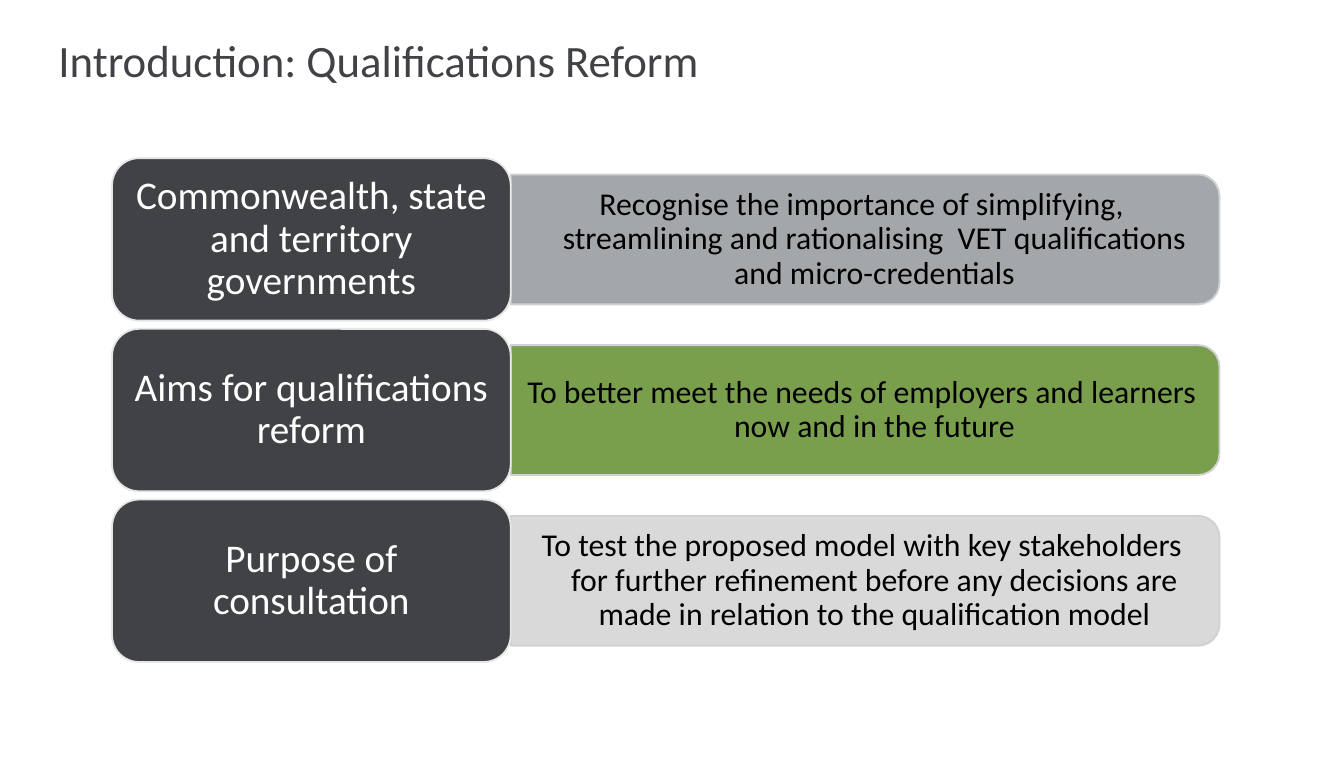
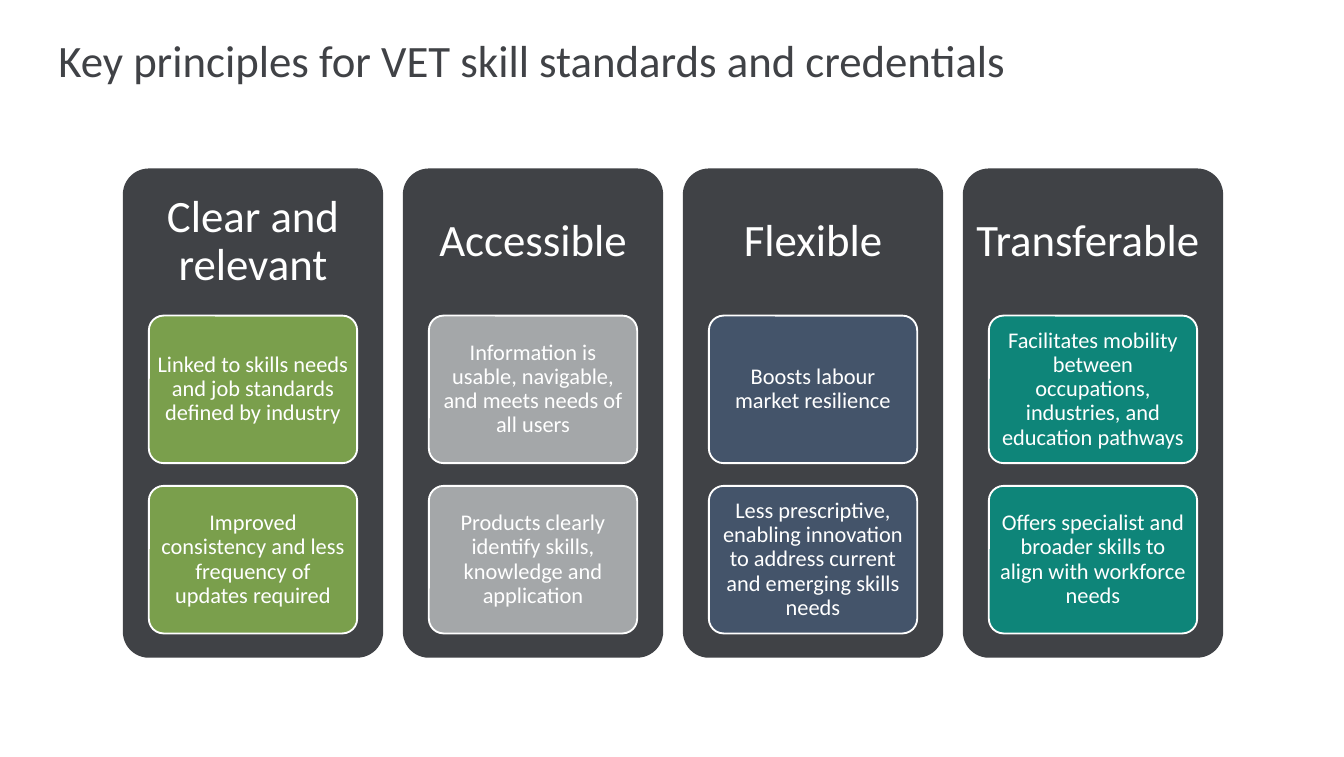
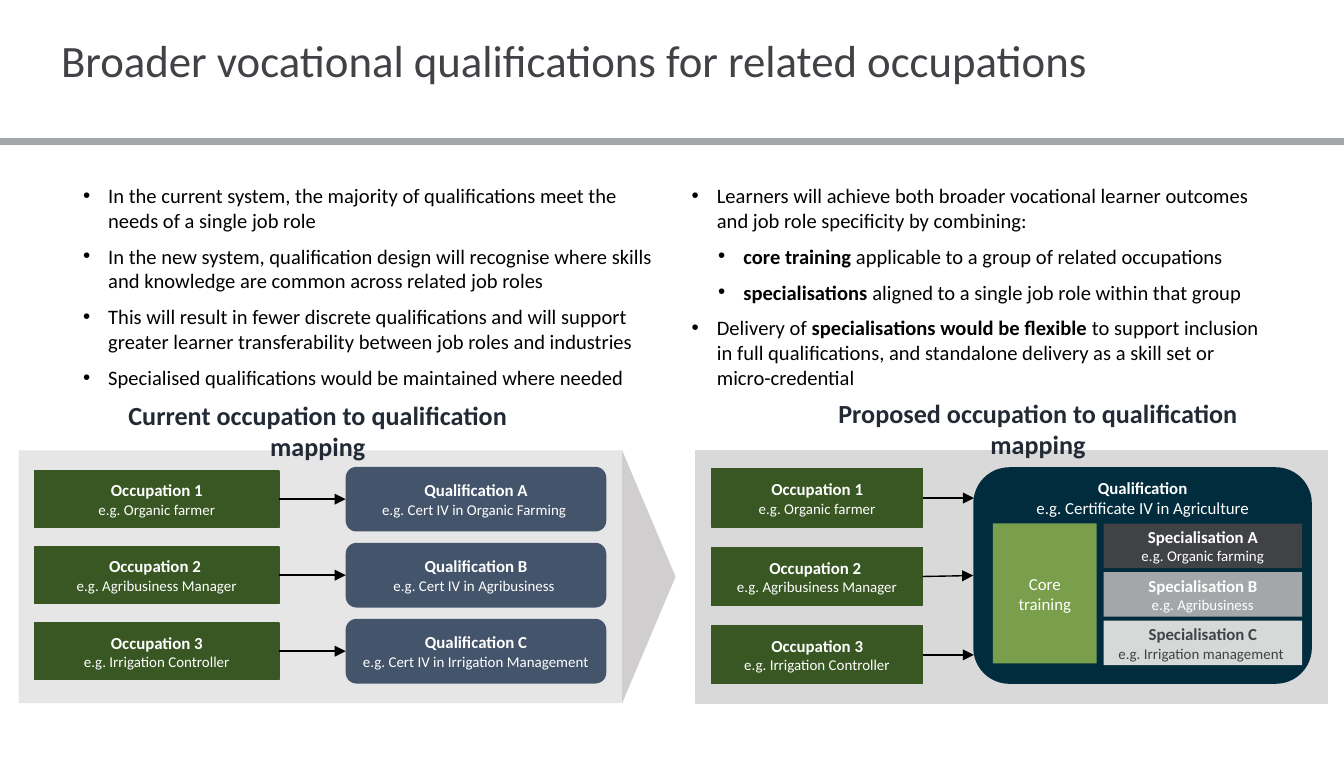
import lxml.etree
import pptx
import pptx.dml.color
import pptx.enum.shapes
import pptx.enum.text
import pptx.oxml.ns
import pptx.util

Pt = pptx.util.Pt
RGBColor = pptx.dml.color.RGBColor
SHAPE = pptx.enum.shapes.MSO_SHAPE
ALIGN = pptx.enum.text.PP_ALIGN
ANCHOR = pptx.enum.text.MSO_ANCHOR
qn = pptx.oxml.ns.qn

FONT = "Calibri"
LEVEL_STEP = 14.2
WHITE = RGBColor(0xFF, 0xFF, 0xFF)
BLACK = RGBColor(0x00, 0x00, 0x00)
CHARCOAL = RGBColor(0x40, 0x42, 0x46)
GREY = RGBColor(0xA4, 0xA7, 0xA9)
LIGHT_GREY = RGBColor(0xD9, 0xD9, 0xD9)
SILVER = RGBColor(0xD7, 0xD8, 0xD8)
PALE_GREY = RGBColor(0xE7, 0xE6, 0xE6)
ARROW_GREY = RGBColor(0xD0, 0xCE, 0xCE)
EDGE_GREY = RGBColor(0xCF, 0xD1, 0xD4)
GREEN = RGBColor(0x7A, 0x9F, 0x4C)
FOREST = RGBColor(0x38, 0x57, 0x23)
SLATE = RGBColor(0x44, 0x54, 0x6A)
TEAL = RGBColor(0x0E, 0x85, 0x79)
NAVY = RGBColor(0x01, 0x2C, 0x3D)
HEADING = RGBColor(0x22, 0x2A, 0x35)

REFORM_ROWS = [
    ("Commonwealth, state and territory governments",
     "Recognise the importance of simplifying, streamlining and rationalising  VET qualifications "
     "and micro-credentials", GREY),
    ("Aims for qualifications reform",
     "To better meet the needs of employers and learners now and in the future", GREEN),
    ("Purpose of consultation",
     "To test the proposed model with key stakeholders for further refinement before any decisions "
     "are made in relation to the qualification model", LIGHT_GREY),
]

PRINCIPLES = [
    ("Clear and relevant", GREEN,
     ["Linked to skills needs and job standards defined by industry",
      "Improved consistency and less frequency of updates required"]),
    ("Accessible", GREY,
     ["Information is usable, navigable, and meets needs of all users",
      "Products clearly identify skills, knowledge and application"]),
    ("Flexible", SLATE,
     ["Boosts labour market resilience",
      "Less prescriptive, enabling innovation to address current and emerging skills needs"]),
    ("Transferable ", TEAL,
     ["Facilitates mobility between occupations, industries, and education pathways",
      "Offers specialist and broader skills to align with workforce needs"]),
]

CURRENT_POINTS = [
    "In the current system, the majority of qualifications meet the needs of a single job role ",
    "In the new system, qualification design will recognise where skills and knowledge are common "
    "across related job roles ",
    "This will result in fewer discrete qualifications and will support greater learner "
    "transferability between job roles and industries ",
    "Specialised qualifications would be maintained where needed",
]
PROPOSED_POINTS = [
    "Learners will achieve both broader vocational learner outcomes and job role specificity by "
    "combining:",
    [("core training ", True, 11), ("applicable to a group of related occupations", False, 11)],
    [("specialisations ", True, 11), ("aligned to a single job role within that group", False, 11)],
    [("Delivery of ", False, 11), ("specialisations would be flexible ", True, 11),
     ("to support inclusion in full qualifications, and standalone delivery as a skill set or "
      "micro-credential", False, 11)],
]

OCCUPATIONS = [
    ("Occupation 1", "e.g. Organic farmer"),
    ("Occupation 2 ", "e.g. Agribusiness Manager"),
    ("Occupation 3", "e.g. Irrigation Controller"),
]
QUALIFICATIONS = [
    ("Qualification A", "e.g. Cert IV in Organic Farming "),
    ("Qualification B", "e.g. Cert IV in Agribusiness "),
    ("Qualification C", "e.g. Cert IV in Irrigation Management"),
]
SPECIALISATIONS = [
    ("Specialisation A", "e.g. Organic farming", CHARCOAL, WHITE),
    ("Specialisation B", "e.g. Agribusiness", GREY, WHITE),
    ("Specialisation C", "e.g. Irrigation management ", SILVER, CHARCOAL),
]


def write_text(shape, paragraphs, size=9, color=WHITE, bold=False, align=ALIGN.CENTER,
               anchor=ANCHOR.MIDDLE, insets=(7.2, 7.2, 7.2, 7.2), line_spacing=None,
               levels=None, hang=0, bullet=None, space=0):
    frame = shape.text_frame
    frame.word_wrap = True
    frame.vertical_anchor = anchor
    frame.margin_left, frame.margin_top, frame.margin_right, frame.margin_bottom = map(Pt, insets)
    for index, content in enumerate(paragraphs):
        paragraph = frame.add_paragraph() if index else frame.paragraphs[0]
        level = levels[index] if levels else 0
        paragraph.level = level
        properties = paragraph._p.get_or_add_pPr()
        if hang:
            properties.set("marL", str(int(Pt(hang + LEVEL_STEP * level))))
            properties.set("indent", str(-int(Pt(hang))))
        if bullet:
            lxml.etree.SubElement(properties, qn("a:buFont")).set("typeface", "Arial")
            lxml.etree.SubElement(properties, qn("a:buChar")).set("char", bullet)
        paragraph.alignment = align
        if line_spacing:
            paragraph.line_spacing = line_spacing
        if space:
            paragraph.space_after = Pt(space)
            if index:
                paragraph.space_before = Pt(space)
        runs = [(content, bold, size)] if isinstance(content, str) else content
        for text, run_bold, run_size in runs:
            run = paragraph.add_run()
            run.text = text
            run.font.name = FONT
            run.font.size = Pt(run_size)
            run.font.bold = run_bold
            run.font.color.rgb = color


def add_text(slide, box, paragraphs, **text_format):
    write_text(slide.shapes.add_textbox(*map(Pt, box)), paragraphs, **text_format)


def add_box(slide, kind, box, fill, line=None, line_width=1, corner=None):
    shape = slide.shapes.add_shape(kind, *map(Pt, box))
    shape.shadow.inherit = False
    shape.fill.solid()
    shape.fill.fore_color.rgb = fill
    if line is None:
        shape.line.fill.background()
    else:
        shape.line.color.rgb = line
        shape.line.width = Pt(line_width)
    if corner is not None:
        shape.adjustments[0] = corner
    return shape


def add_turned_box(slide, kind, box, fill, line=None):
    left, top, width, height = box
    shift = (width - height) / 2
    shape = add_box(slide, kind, (left + shift, top - shift, height, width), fill, line)
    shape.rotation = 90
    return shape


def add_arrow(slide, start, end, source, target=None):
    connector = slide.shapes.add_connector(
        pptx.enum.shapes.MSO_CONNECTOR.STRAIGHT, *map(Pt, start + end))
    connector.begin_connect(source, 3)
    if target is not None:
        connector.end_connect(target, 1)
    connector.line.color.rgb = BLACK
    connector.line.width = Pt(0.75)
    outline = connector.element.spPr.find(qn("a:ln"))
    lxml.etree.SubElement(outline, qn("a:tailEnd")).set("type", "triangle")
    lxml.etree.SubElement(connector.element.spPr, qn("a:effectLst"))


def labelled(title, example, example_size=8):
    return [[(title, True, 9)], [(example, False, example_size)]]


def add_titled_slide(presentation, title, left=26.3):
    slide = presentation.slides.add_slide(presentation.slide_layouts[6])
    add_text(slide, (left, 15.6, 575, 32.4), [title], size=24, color=CHARCOAL,
             align=ALIGN.LEFT, insets=(5, 5, 5, 5))
    return slide


def add_reform_row(slide, box, label, detail, fill):
    left, top, width, height = box
    label_width = 0.36 * width
    detail_left = left + label_width
    detail_width = width - label_width
    detail_top = top + 0.1 * height
    detail_height = 0.8 * height
    add_turned_box(slide, SHAPE.ROUND_2_SAME_RECTANGLE,
                   (detail_left, detail_top, detail_width, detail_height), fill, EDGE_GREY)
    add_text(slide, (detail_left, detail_top + 3.4, detail_width - 3.4, detail_height - 6.8),
             [detail], size=17, color=BLACK, insets=(5, 2.7, 5, 2.7), line_spacing=0.9, hang=13.5)
    label_box = add_box(slide, SHAPE.ROUNDED_RECTANGLE, (left, top, label_width, height),
                        CHARCOAL, PALE_GREY)
    write_text(label_box, [label], size=21, insets=(6.3, 3.2, 6.3, 3.2), line_spacing=0.9)


def add_principle_column(slide, box, name, fill, statements):
    left, top, width, height = box
    header_height = 0.3 * height
    add_box(slide, SHAPE.ROUNDED_RECTANGLE, box, CHARCOAL, corner=0.1)
    add_text(slide, (left, top, width, header_height), [name], size=24, line_spacing=0.9)
    for index, statement in enumerate(statements):
        card = add_box(slide, SHAPE.ROUNDED_RECTANGLE,
                       (left + 0.1 * width, top + header_height + 0.2 + 91.2 * index,
                        0.8 * width, 79),
                       fill, WHITE, corner=0.1)
        write_text(card, [statement], size=12, insets=(2.4, 2.4, 2.4, 2.4), line_spacing=0.9)


def add_bullets(slide, box, points, levels=None):
    add_text(slide, box, points, size=11, color=BLACK, align=ALIGN.LEFT, anchor=ANCHOR.TOP,
             insets=(7.2, 3.6, 7.2, 3.6), levels=levels, hang=13.5, bullet="•", space=3)


def add_mapping_heading(slide, box, heading):
    add_text(slide, box, [heading], size=14, color=HEADING, bold=True, insets=(19.4, 2, 5, 2))


def add_occupations(slide, box, pitch):
    left, top, width, height = box
    shapes = []
    for index, (title, example) in enumerate(OCCUPATIONS):
        shape = add_box(slide, SHAPE.RECTANGLE, (left, top + pitch * index, width, height),
                        FOREST, FOREST, 0.75)
        write_text(shape, labelled(title, example), insets=(2.9, 2.9, 2.9, 2.9))
        shapes.append(shape)
    return shapes


def add_current_mapping(slide, box):
    left, top, width, height = box
    pitch = 40.7
    add_box(slide, SHAPE.RECTANGLE, box, PALE_GREY)
    add_turned_box(slide, SHAPE.ISOSCELES_TRIANGLE, (left + width, top, 28.6, height), ARROW_GREY)
    occupations = add_occupations(slide, (left + 8.5, top + 11, 131, 30.2), pitch)
    for index, (title, example) in enumerate(QUALIFICATIONS):
        qualification = add_box(slide, SHAPE.ROUNDED_RECTANGLE,
                                (left + 175.2, top + 8.8 + pitch * index, 139.6, 34.6), SLATE)
        write_text(qualification, labelled(title, example))
        middle = top + 26.1 + pitch * index
        add_arrow(slide, (left + 139.5, middle), (left + 175.2, middle),
                  occupations[index], qualification)
    add_mapping_heading(slide, (left + 12.3, top - 16, 281.5, 11),
                        "Current occupation to qualification mapping")


def add_proposed_mapping(slide, box):
    left, top, width, height = box
    pitch = 42
    add_box(slide, SHAPE.RECTANGLE, box, LIGHT_GREY, LIGHT_GREY, 0.75)
    qualification = add_box(slide, SHAPE.ROUNDED_RECTANGLE,
                            (left + 148.6, top + 8.9, 181.4, 116), NAVY)
    write_text(qualification, labelled("Qualification", "e.g. Certificate IV in Agriculture", 9),
               anchor=ANCHOR.TOP, insets=(7.2, 0, 7.2, 7.2))
    occupations = add_occupations(slide, (left + 8.5, top + 9.9, 113, 31), pitch)
    for index, occupation in enumerate(occupations):
        middle = top + 25.4 + pitch * index
        add_arrow(slide, (left + 121.5, middle), (left + 149, middle), occupation,
                  qualification if index == 1 else None)
    core = add_box(slide, SHAPE.RECTANGLE, (left + 159.1, top + 39, 55.6, 75), GREEN)
    write_text(core, ["Core training"])
    for index, (title, example, fill, color) in enumerate(SPECIALISATIONS):
        specialisation = add_box(slide, SHAPE.RECTANGLE,
                                 (left + 218.4, top + 39.1 + 26 * index, 106.4, 23.8), fill)
        write_text(specialisation, labelled(title, example), color=color)
    add_mapping_heading(slide, (left + 35.3, top - 18.2, 281.5, 13),
                        "Proposed occupation to qualification mapping")


def build_reform_slide(presentation):
    slide = add_titled_slide(presentation, "Introduction: Qualifications Reform")
    for index, row in enumerate(REFORM_ROWS):
        add_reform_row(slide, (60, 84.7 + 91.4 * index, 593.3, 87), *row)


def build_principles_slide(presentation):
    slide = add_titled_slide(presentation, "Key principles for VET skill standards and credentials")
    for index, principle in enumerate(PRINCIPLES):
        add_principle_column(slide, (65.8 + 150 * index, 90.2, 139.5, 262), *principle)


def build_mapping_slide(presentation):
    slide = add_titled_slide(
        presentation, "Broader vocational qualifications for related occupations", 27.7)
    add_box(slide, SHAPE.RECTANGLE, (0, 74.3, 720, 3), GREY, GREY)
    add_current_mapping(slide, (10, 241.2, 323.3, 135.3))
    add_proposed_mapping(slide, (372.8, 241.3, 338.4, 135.2))
    add_bullets(slide, (37.4, 94.5, 322.6, 119), CURRENT_POINTS)
    add_bullets(slide, (363.5, 94.5, 318.5, 119), PROPOSED_POINTS, levels=[0, 1, 1, 0])


def main():
    presentation = pptx.Presentation()
    presentation.slide_width = Pt(720)
    presentation.slide_height = Pt(405.36)
    build_reform_slide(presentation)
    build_principles_slide(presentation)
    build_mapping_slide(presentation)
    presentation.save("out.pptx")


if __name__ == "__main__":
    main()
